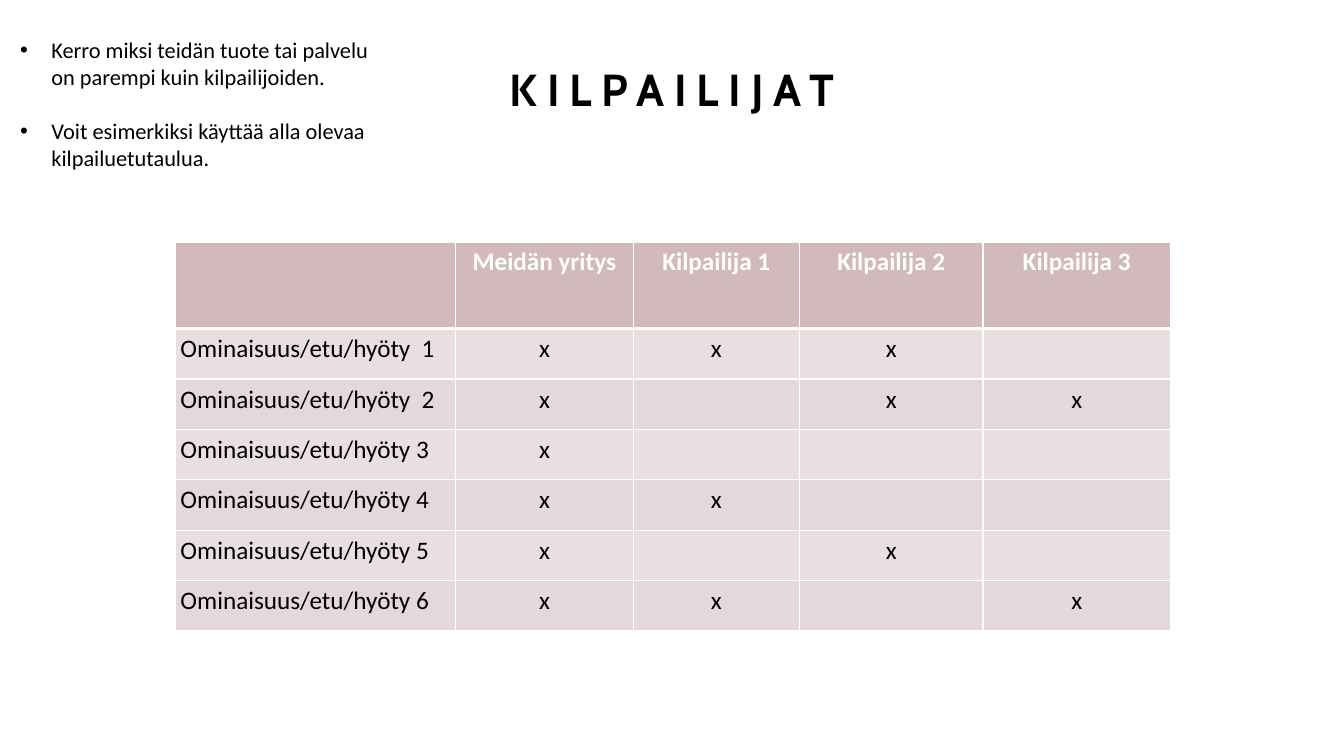
from dataclasses import dataclass

from lxml.etree import SubElement
from pptx import Presentation
from pptx.dml.color import RGBColor
from pptx.enum.text import MSO_ANCHOR, MSO_AUTO_SIZE, PP_ALIGN
from pptx.oxml.ns import qn
from pptx.util import Inches, Pt

# Content
TITLE = "KILPAILIJAT"
ADVICE = [
    "Kerro miksi teidän tuote tai palvelu on parempi kuin kilpailijoiden.",
    "Voit esimerkiksi käyttää alla olevaa kilpailuetutaulua.",
]
COMPARISON = [
    ("", "Meidän yritys", "Kilpailija 1", "Kilpailija 2", "Kilpailija 3"),
    ("Ominaisuus/etu/hyöty  1", "x", "x", "x", ""),
    ("Ominaisuus/etu/hyöty  2", "x", "", "x", "x"),
    ("Ominaisuus/etu/hyöty 3", "x", "", "", ""),
    ("Ominaisuus/etu/hyöty 4", "x", "x", "", ""),
    ("Ominaisuus/etu/hyöty 5", "x", "", "x", ""),
    ("Ominaisuus/etu/hyöty 6", "x", "x", "", "x"),
]
COLUMN_WIDTHS = [2.78, 1.76, 1.65, 1.82, 1.86]
HEADER_HEIGHT, ROW_HEIGHT = 0.86, 0.5


@dataclass(frozen=True)
class Theme:
    title_font: str = "Cabin"
    body_font: str = "Calibri"
    title_size: int = 32
    advice_size: int = 16
    table_size: int = 18
    text: str = "000000"
    white: str = "FFFFFF"
    header: str = "D1B9BC"
    bands: tuple = ("E9DFE1", "E4D8DA")
    inset: float = 0.05


THEME = Theme()


def style(paragraph, font_name, size, color, bold=False):
    font = paragraph.font
    font.name, font.size, font.bold = font_name, Pt(size), bold
    font.color.rgb = RGBColor.from_string(color)


def set_insets(frame, inset):
    frame.margin_left = frame.margin_right = Inches(inset)
    frame.margin_top = frame.margin_bottom = Inches(inset)


def add_title(slide):
    title = slide.shapes.title
    title.left, title.top = Inches(4), Inches(0.37)
    title.width, title.height = Inches(5.33), Inches(1.01)
    frame = title.text_frame
    frame.text = TITLE
    frame.auto_size = MSO_AUTO_SIZE.NONE
    frame.vertical_anchor = MSO_ANCHOR.MIDDLE
    set_insets(frame, 0)
    heading = frame.paragraphs[0]
    heading.alignment = PP_ALIGN.CENTER
    style(heading, THEME.title_font, THEME.title_size, THEME.text, bold=True)
    heading.runs[0].font._element.set("spc", "700")


def add_advice(slide):
    advice = slide.shapes.add_textbox(Inches(0.15), Inches(0.31), Inches(3.58), Inches(1.44))
    frame = advice.text_frame
    frame.word_wrap = True
    frame.auto_size = MSO_AUTO_SIZE.SHAPE_TO_FIT_TEXT
    set_insets(frame, THEME.inset)
    frame.text = "\n".join(ADVICE)
    for index, point in enumerate(frame.paragraphs):
        if index:
            point.space_before = Pt(19.5)
        properties = point._p.get_or_add_pPr()
        properties.set("marL", str(Inches(0.31)))
        properties.set("indent", str(-Inches(0.31)))
        SubElement(properties, qn("a:buFont"), typeface="Arial")
        SubElement(properties, qn("a:buChar"), char="•")
        style(point, THEME.body_font, THEME.advice_size, THEME.text)


def add_borders(cell, top, bottom):
    properties = cell._tc.get_or_add_tcPr()
    for side, width in (("L", 1), ("R", 1), ("T", top), ("B", bottom)):
        line = SubElement(properties, qn(f"a:ln{side}"), w=str(Pt(width)))
        fill = SubElement(line, qn("a:solidFill"))
        SubElement(fill, qn("a:srgbClr"), val=THEME.white)


def add_comparison(slide):
    height = HEADER_HEIGHT + ROW_HEIGHT * (len(COMPARISON) - 1)
    table = slide.shapes.add_table(
        len(COMPARISON), len(COLUMN_WIDTHS),
        Inches(1.74), Inches(2.4), Inches(sum(COLUMN_WIDTHS)), Inches(height),
    ).table
    for column, width in zip(table.columns, COLUMN_WIDTHS):
        column.width = Inches(width)

    for row, labels in enumerate(COMPARISON):
        is_header = row == 0
        table.rows[row].height = Inches(HEADER_HEIGHT if is_header else ROW_HEIGHT)
        band = THEME.header if is_header else THEME.bands[(row - 1) % 2]
        color = THEME.white if is_header else THEME.text
        for column, label in enumerate(labels):
            cell = table.cell(row, column)
            cell.text = label
            set_insets(cell, THEME.inset)
            # Borders come before the fill in the cell properties
            add_borders(cell, top=3 if row == 1 else 1, bottom=3 if is_header else 1)
            cell.fill.solid()
            cell.fill.fore_color.rgb = RGBColor.from_string(band)
            entry = cell.text_frame.paragraphs[0]
            entry.alignment = PP_ALIGN.CENTER if column else PP_ALIGN.LEFT
            style(entry, THEME.body_font, THEME.table_size, color, bold=is_header)


def main():
    deck = Presentation()
    deck.slide_width, deck.slide_height = Inches(13.33), Inches(7.5)
    slide = deck.slides.add_slide(deck.slide_layouts[5])
    add_title(slide)
    add_advice(slide)
    add_comparison(slide)
    deck.save("out.pptx")


if __name__ == "__main__":
    main()
